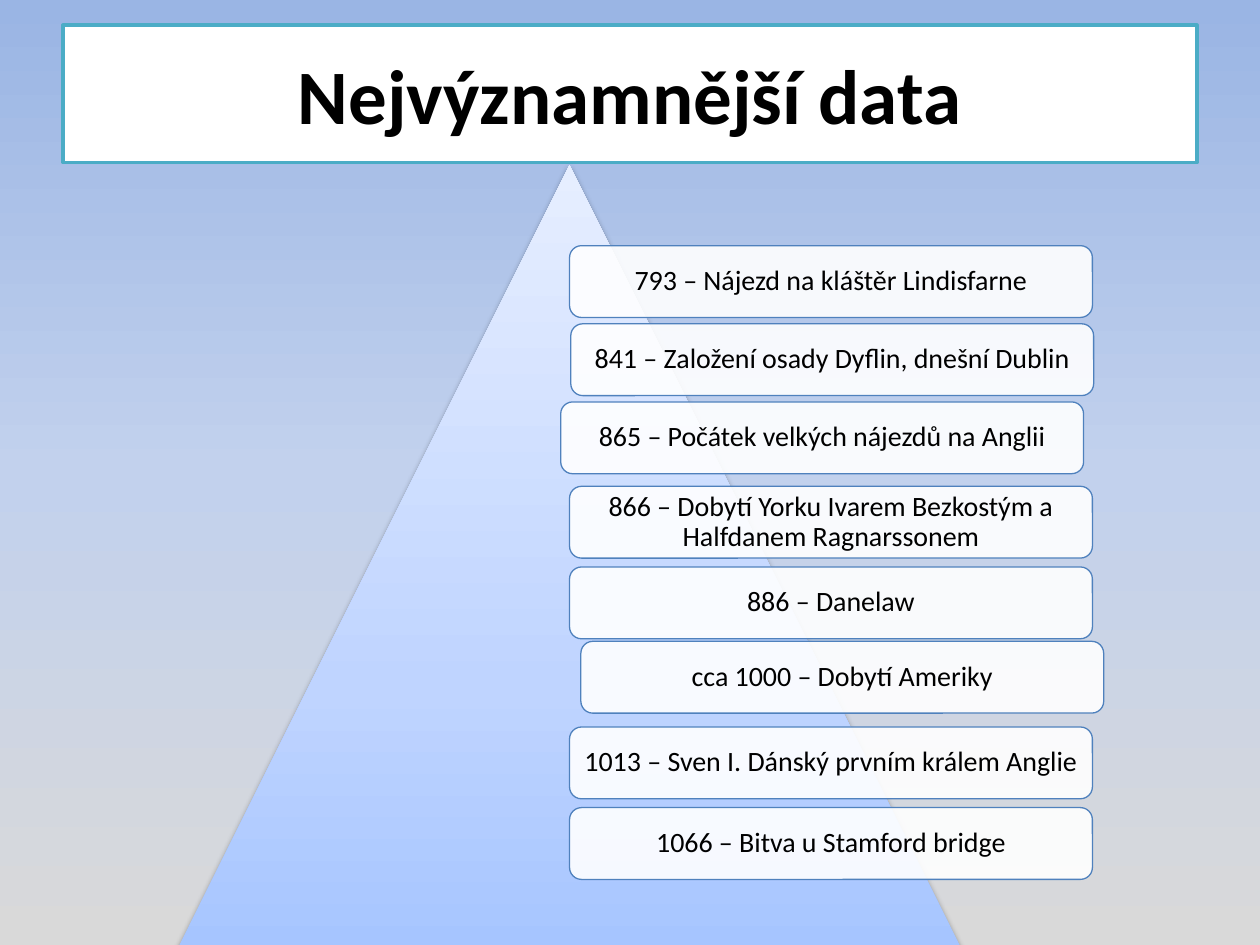
from typing import NamedTuple

from lxml import etree
from pptx import Presentation
from pptx.dml.color import RGBColor
from pptx.enum.shapes import MSO_SHAPE
from pptx.enum.text import MSO_ANCHOR, PP_ALIGN
from pptx.oxml.ns import qn
from pptx.util import Inches, Pt

TRIANGLE = MSO_SHAPE.ISOSCELES_TRIANGLE
ROUNDED = MSO_SHAPE.ROUNDED_RECTANGLE
MIDDLE = MSO_ANCHOR.MIDDLE
CENTER = PP_ALIGN.CENTER

FONT = "Calibri"
COLORS = {
    "text": "000000",
    "panel": "FFFFFF",
    "title_line": "4BACC6",
    "event_line": "4F81BD",
    "shadow": "000000",
}
SKY_STOPS = ((0, "9AB5E4"), (50, "C2D1ED"), (100, "D9D9D9"))
PYRAMID_STOPS = ((0, "A4C4FF"), (35, "BFD4FF"), (100, "E6EEFF"))
EVENT_WIDTH, EVENT_HEIGHT = 4.15, 0.57
EVENT_LEFT = 4.52


class Event(NamedTuple):
    label: str
    top: float
    left: float = EVENT_LEFT


EVENTS = (
    Event("793 – Nájezd na kláštěr Lindisfarne", 1.95),
    Event("841 – Založení osady Dyflin, dnešní Dublin", 2.57, 4.53),
    Event("865 – Počátek velkých nájezdů na Anglii", 3.19, 4.45),
    Event("866 – Dobytí Yorku Ivarem Bezkostým a Halfdanem Ragnarssonem", 3.86),
    Event("886 – Danelaw", 4.5),
    Event("cca 1000 – Dobytí Ameriky", 5.09, 4.61),
    Event("1013 – Sven I. Dánský prvním králem Anglie", 5.77),
    Event("1066 – Bitva u Stamford bridge", 6.41),
)


def rgb(name: str) -> RGBColor:
    return RGBColor.from_string(COLORS[name])


def add_color(parent, value: str):
    return etree.SubElement(parent, qn("a:srgbClr"), val=value)


def add_alpha(color, percent: int) -> None:
    etree.SubElement(color, qn("a:alpha"), val=str(percent * 1000))


def set_gradient(fill, owner, stops, angle: int) -> None:
    """Fill with any number of stops; the angle runs counter-clockwise."""
    fill.gradient()
    fill.gradient_angle = angle
    stop_list = next(owner.iter(qn("a:gsLst")))
    for old_stop in list(stop_list):
        stop_list.remove(old_stop)
    for position, value in stops:
        stop = etree.SubElement(stop_list, qn("a:gs"), pos=str(position * 1000))
        add_color(stop, value)


def style_panel(panel, line_name: str, line_width: float) -> None:
    panel.fill.solid()
    panel.fill.fore_color.rgb = rgb("panel")
    panel.line.color.rgb = rgb(line_name)
    panel.line.width = Pt(line_width)


def write_centered(shape, text: str, size: int, bold: bool = False) -> None:
    frame = shape.text_frame
    frame.text = text
    frame.word_wrap = True
    frame.vertical_anchor = MIDDLE
    paragraph = frame.paragraphs[0]
    paragraph.alignment = CENTER
    font = paragraph.runs[0].font
    font.name, font.size, font.bold = FONT, Pt(size), bold
    font.color.rgb = rgb("text")


def format_title(title) -> None:
    title.left, title.top = Inches(0.5), Inches(0.2)
    title.width, title.height = Inches(9), Inches(1.09)
    style_panel(title, "title_line", 2)
    write_centered(title, "Nejvýznamnější data", 44, bold=True)


def add_pyramid(slide) -> None:
    pyramid = slide.shapes.add_shape(
        TRIANGLE, Inches(1.33), Inches(1.31), Inches(6.38), Inches(6.38))
    set_gradient(pyramid.fill, pyramid.element, PYRAMID_STOPS, 90)
    pyramid.line.fill.background()
    pyramid.shadow.inherit = False
    effects = next(pyramid.element.iter(qn("a:effectLst")))
    shadow = etree.SubElement(
        effects, qn("a:outerShdw"), blurRad=str(Pt(3.1)), dist=str(Pt(1.6)),
        dir=str(90 * 60000), rotWithShape="0")
    add_alpha(add_color(shadow, COLORS["shadow"]), 38)


def add_event(slide, event: Event) -> None:
    box = slide.shapes.add_shape(
        ROUNDED, Inches(event.left), Inches(event.top),
        Inches(EVENT_WIDTH), Inches(EVENT_HEIGHT))
    box.shadow.inherit = False
    style_panel(box, "event_line", 0.75)
    add_alpha(next(box.element.iter(qn("a:srgbClr"))), 90)
    write_centered(box, event.label, 16)
    frame = box.text_frame
    frame.margin_left = frame.margin_right = Inches(0.07)
    frame.margin_top = frame.margin_bottom = Inches(0.07)
    frame.paragraphs[0].line_spacing = 0.9


def main() -> None:
    deck = Presentation()
    deck.slide_width, deck.slide_height = Inches(10), Inches(7.5)
    slide = deck.slides.add_slide(deck.slide_layouts[5])
    set_gradient(slide.background.fill, slide.element, SKY_STOPS, 270)
    format_title(slide.shapes.title)
    add_pyramid(slide)
    for event in EVENTS:
        add_event(slide, event)
    deck.save("out.pptx")


if __name__ == "__main__":
    main()
